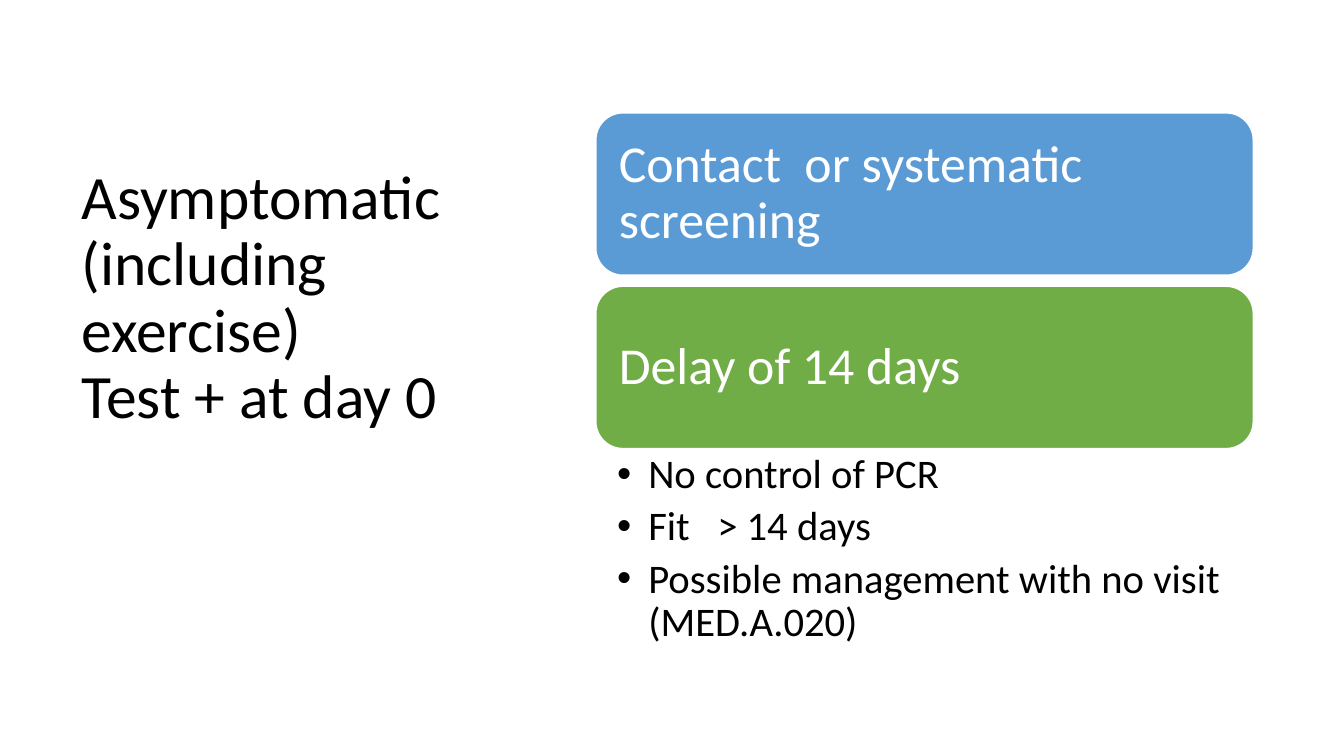
from dataclasses import dataclass, field

from lxml import etree
from pptx import Presentation
from pptx import util as u
from pptx.dml import color
from pptx.enum import shapes, text
from pptx.oxml import ns

PX = 9144
BLACK, WHITE = "000000", "FFFFFF"


@dataclass(frozen=True)
class Block:
    """A block of text, with a rounded card behind it when it has a fill."""
    box: tuple[int, int, int, int]
    lines: tuple[str, ...]
    size: int
    ink: str = BLACK
    fill: str = ""
    indent: int = 0
    insets: tuple[int, int, int, int] = (10, 5, 10, 5)
    fmt: dict = field(default_factory=dict)


CARD = dict(size=37, ink=WHITE, insets=(15, 15, 15, 15),
            fmt={"vertical_anchor": text.MSO_ANCHOR.MIDDLE})
BLOCKS = (
    Block((71, 160, 415, 294),
          ("Asymptomatic (including exercise) \vTest + at day 0",), 44),
    Block((591, 112, 652, 161), ("Contact  or systematic screening",),
          fill="5B9BD5", **CARD),
    Block((591, 284, 652, 161), ("Delay of 14 days",), fill="70AD47", **CARD),
    Block((591, 445, 652, 209),
          ("No control of PCR", "Fit   > 14 days",
           "Possible management with no visit (MED.A.020)"),
          29, indent=31, insets=(21, 5, 29, 5)),
)


def px(n: int) -> u.Emu:
    """Turn px into EMU."""
    return u.Emu(n * PX)


def rgb(value: str) -> color.RGBColor:
    """Turn a hex string into a colour."""
    return color.RGBColor.from_string(value)


def apply(target: object, values: dict) -> None:
    """Set each attribute in values on target."""
    for name, value in values.items():
        setattr(target, name, value)


def add_bullet(p, indent: int) -> None:
    """Give a paragraph a hanging round bullet."""
    ppr = p._p.get_or_add_pPr()
    ppr.set("marL", str(px(indent)))
    ppr.set("indent", str(-px(indent)))
    etree.SubElement(ppr, ns.qn("a:buFont"), typeface="Arial")
    etree.SubElement(ppr, ns.qn("a:buChar"), char="•")


def add_block(slide, block: Block) -> None:
    """Draw one block on the slide."""
    box = [px(n) for n in block.box]
    if block.fill:
        sp = slide.shapes.add_shape(shapes.MSO_SHAPE.ROUNDED_RECTANGLE, *box)
        sp.shadow.inherit = False
        sp.fill.solid()
        sp.fill.fore_color.rgb = rgb(block.fill)
        sp.line.color.rgb = rgb(WHITE)
        sp.line.width = u.Pt(1)
    else:
        sp = slide.shapes.add_textbox(*box)
    tf = sp.text_frame
    sides = ("margin_left", "margin_top", "margin_right", "margin_bottom")
    apply(tf, dict(zip(sides, map(px, block.insets))))
    apply(tf, {"word_wrap": True, **block.fmt})
    for i, line in enumerate(block.lines):
        p = tf.add_paragraph() if i else tf.paragraphs[0]
        p.text = line
        if block.indent:
            add_bullet(p, block.indent)
        apply(p, {"alignment": text.PP_ALIGN.LEFT, "line_spacing": 0.9})
        if i < len(block.lines) - 1:
            p.space_after = u.Pt(6)
        for r in p.runs:
            apply(r.font, {"name": "Calibri", "size": u.Pt(block.size)})
            r.font.color.rgb = rgb(block.ink)


def main() -> None:
    """Build the slide and save it."""
    prs = Presentation()
    apply(prs, {"slide_width": px(1333), "slide_height": px(750)})
    s = prs.slides.add_slide(prs.slide_layouts[6])
    for block in BLOCKS:
        add_block(s, block)
    prs.save("out.pptx")


if __name__ == "__main__":
    main()
